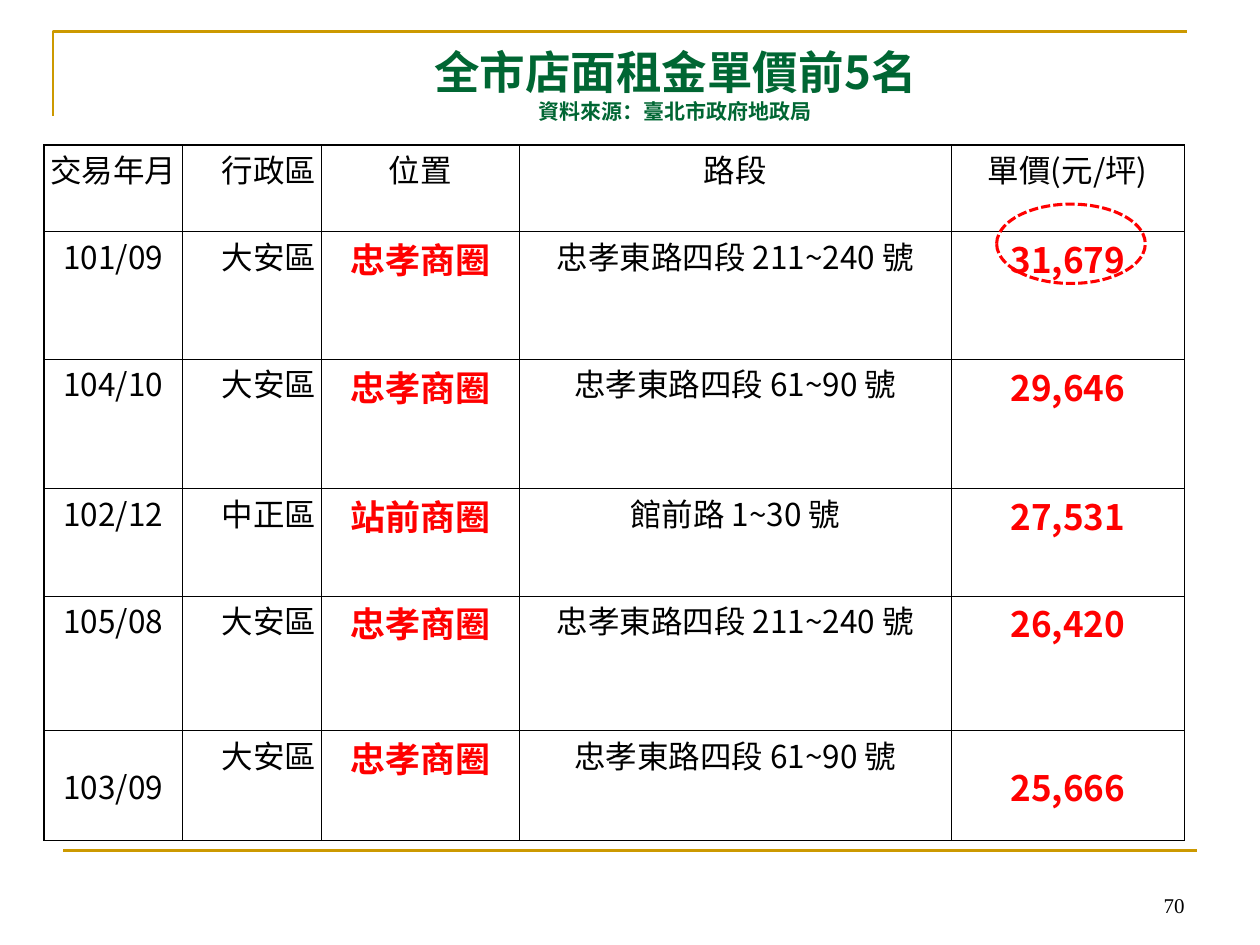
from lxml.etree import SubElement
from pptx import Presentation
from pptx.dml.color import RGBColor
from pptx.enum.dml import MSO_LINE
from pptx.enum.shapes import MSO_CONNECTOR, MSO_SHAPE
from pptx.enum.text import MSO_ANCHOR as Anchor, PP_ALIGN as Align
from pptx.oxml.ns import qn
from pptx.util import Inches, Pt

BLACK = RGBColor(0x00, 0x00, 0x00)
WHITE = RGBColor(0xFF, 0xFF, 0xFF)
RED = RGBColor(0xFF, 0x00, 0x00)
GREEN = RGBColor(0x00, 0x66, 0x33)
GOLD = RGBColor(0xCC, 0x99, 0x00)
SANS = "Noto Sans CJK SC"
SERIF = "Times New Roman"

COLUMN_WIDTHS = [1.1, 1.1, 1.57, 3.43, 1.85]
ROW_HEIGHTS = [0.69, 1.01, 1.03, 0.85, 1.07, 0.87]
DISTRICT_COLUMN = 1
HIGHLIGHT_COLUMNS = (2, 4)
RENTS = [
    ["交易年月", "行政區", "位置", "路段", "單價(元/坪)"],
    ["101/09", "大安區", "忠孝商圈", "忠孝東路四段 211~240 號", "31,679"],
    ["104/10", "大安區", "忠孝商圈", "忠孝東路四段 61~90 號", "29,646"],
    ["102/12", "中正區", "站前商圈", "館前路 1~30 號", "27,531"],
    ["105/08", "大安區", "忠孝商圈", "忠孝東路四段 211~240 號", "26,420"],
    ["103/09", "大安區", "忠孝商圈", "忠孝東路四段 61~90 號", "25,666"],
]


def style_font(font, size, color, bold=False, name=SANS):
    """Set the font for Latin and East Asian text alike."""
    font.size, font.bold, font.name = Pt(size), bold, name
    font.color.rgb = color
    latin = font._element.find(qn("a:latin"))
    east_asian = latin.makeelement(qn("a:ea"), {"typeface": name})
    latin.addnext(east_asian)


def add_text_box(page, left, top, width, height, align, anchor):
    """Add an empty text box and return its paragraph."""
    box = page.shapes.add_textbox(Inches(left), Inches(top), Inches(width), Inches(height))
    box.text_frame.word_wrap = True
    box.text_frame.vertical_anchor = anchor
    para = box.text_frame.paragraphs[0]
    para.alignment = align
    return para


def add_title(page):
    para = add_text_box(page, 1.22, 0.3, 8.28, 0.93, Align.CENTER, Anchor.TOP)
    heading = para.add_run()
    heading.text = "全市店面租金單價前5名"
    style_font(heading.font, 26, GREEN, bold=True)
    para.add_line_break()
    source = para.add_run()
    source.text = "資料來源：臺北市政府地政局"
    style_font(source.font, 12, GREEN, bold=True)


def add_page_number(page):
    para = add_text_box(page, 7.17, 6.83, 2.33, 0.5, Align.RIGHT, Anchor.BOTTOM)
    para.text = "70"
    style_font(para.font, 12, BLACK, name=SERIF)


def add_frame_lines(page):
    builder = page.shapes.build_freeform(Inches(0.42), Inches(0.92))
    corner_points = [(Inches(0.42), Inches(0.25)), (Inches(9.42), Inches(0.25))]
    builder.add_line_segments(corner_points, close=False)
    corner = builder.convert_to_shape()
    corner.shadow.inherit = False
    corner.fill.background()

    footer = page.shapes.add_connector(
        MSO_CONNECTOR.STRAIGHT, Inches(0.5), Inches(6.75), Inches(9.5), Inches(6.75))
    SubElement(footer._element.spPr, qn("a:effectLst"))

    for rule in (corner, footer):
        rule.line.color.rgb = GOLD
        rule.line.width = Pt(1.5)


def set_borders(cell, widths):
    """Draw black borders; widths maps each side tag to points."""
    properties = cell._tc.get_or_add_tcPr()
    for position, (side, width) in enumerate(widths.items()):
        border = properties.makeelement(qn(f"a:{side}"), {"w": str(Pt(width))})
        fill = SubElement(border, qn("a:solidFill"))
        SubElement(fill, qn("a:srgbClr"), val=str(BLACK))
        properties.insert(position, border)


def fill_cell(cell, row, column):
    is_district = column == DISTRICT_COLUMN
    last_row, last_column = len(ROW_HEIGHTS) - 1, len(COLUMN_WIDTHS) - 1
    cell.margin_left = Inches(0.31 if is_district else 0.01)
    cell.margin_top = cell.margin_right = Inches(0.01)
    cell.margin_bottom = 0
    if row == last_row and column in (0, last_column):
        cell.vertical_anchor = Anchor.MIDDLE

    para = cell.text_frame.paragraphs[0]
    para.text = RENTS[row][column]
    para.alignment = Align.LEFT if is_district else Align.CENTER
    if row > 0 and column in HIGHLIGHT_COLUMNS:
        style_font(para.font, 20, RED, bold=True)
    else:
        style_font(para.font, 18, BLACK)

    if row == 0:
        cell.fill.solid()
        cell.fill.fore_color.rgb = WHITE
    else:
        cell.fill.background()
    set_borders(cell, {
        "lnL": 1 if column == 0 else 0.5,
        "lnR": 1 if column == last_column else 0.5,
        "lnT": 1 if row == 0 else 0.5,
        "lnB": 1 if row == last_row else 0.5,
    })


def add_rent_table(page):
    table = page.shapes.add_table(
        len(ROW_HEIGHTS), len(COLUMN_WIDTHS), Inches(0.35), Inches(1.15),
        Inches(sum(COLUMN_WIDTHS)), Inches(sum(ROW_HEIGHTS))).table
    table.first_row = table.horz_banding = False
    for column, width in enumerate(COLUMN_WIDTHS):
        table.columns[column].width = Inches(width)
    for row, height in enumerate(ROW_HEIGHTS):
        table.rows[row].height = Inches(height)
        for column in range(len(COLUMN_WIDTHS)):
            fill_cell(table.cell(row, column), row, column)


def add_top_rent_ring(page):
    ring = page.shapes.add_shape(
        MSO_SHAPE.OVAL, Inches(7.91), Inches(1.62), Inches(1.18), Inches(0.63))
    ring.shadow.inherit = False
    ring.fill.background()
    ring.line.color.rgb = RED
    ring.line.width = Pt(1.75)
    ring.line.dash_style = MSO_LINE.SQUARE_DOT


def main():
    deck = Presentation()
    deck.slide_width, deck.slide_height = Inches(10), Inches(7.5)
    page = deck.slides.add_slide(deck.slide_layouts[6])
    add_frame_lines(page)
    add_page_number(page)
    add_title(page)
    add_rent_table(page)
    add_top_rent_ring(page)
    deck.save("out.pptx")


if __name__ == "__main__":
    main()
